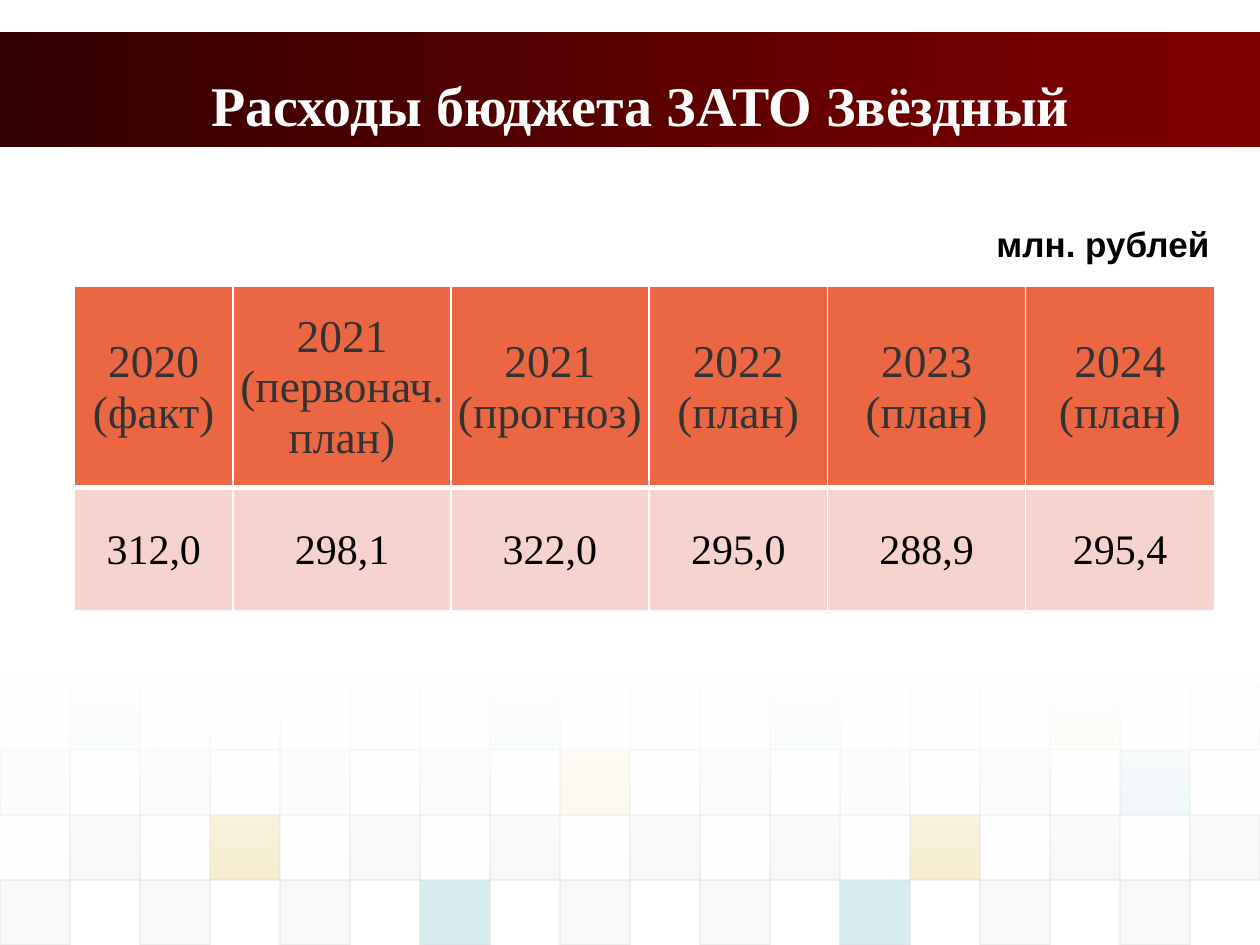
from dataclasses import dataclass

from lxml import etree
from pptx import Presentation
from pptx import util as u
from pptx.dml.color import RGBColor
from pptx.enum import shapes, text
from pptx.oxml import ns

WIDTH, HEIGHT = 10, 7.5


@dataclass(frozen=True)
class Theme:
    serif: str = "Times New Roman"
    sans: str = "Arial"
    title_size: int = 32
    header_size: int = 26
    value_size: int = 24
    unit_size: int = 20
    white: str = "FFFFFF"
    black: str = "000000"
    band_dark: str = "330000"
    band_light: str = "800000"
    header_fill: str = "EB6743"
    header_text: str = "333333"
    value_fill: str = "F7D3CF"
    grey: str = "DDDDDD"
    pale: str = "EAEAEA"
    teal: str = "38A3B2"
    gold: str = "D3A911"


THEME = Theme()
TILE_COLOURS = {"d": THEME.grey, "e": THEME.pale, "t": THEME.teal, "g": THEME.gold}
# One row of tiles per entry: colour keys, opacity in percent
TILE_ROWS = [("teetdtege", 5), ("ddddgdddt", 10),
             ("dgddddgdd", 20), ("dddtddtdd", 20)]
BUDGET = [
    (("2020", "(факт)"), "312,0"),
    (("2021", "(первонач.план)"), "298,1"),
    (("2021", "(прогноз)"), "322,0"),
    (("2022", "(план)"), "295,0"),
    (("2023", "(план)"), "288,9"),
    (("2024", "(план)"), "295,4"),
]
COLUMN_WIDTHS = [1.26, 1.73, 1.57, 1.42, 1.57, 1.5]
ROW_HEIGHTS = [1.6, 0.98]


def inches(box):
    return [u.Inches(length) for length in box]


def colour(value):
    return RGBColor.from_string(value)


def set_alpha(colour_element, percent):
    alpha = etree.SubElement(colour_element, ns.qn("a:alpha"))
    alpha.set("val", str(percent * 1000))


def add_rect(slide, box):
    rect = slide.shapes.add_shape(shapes.MSO_SHAPE.RECTANGLE, *inches(box))
    rect.shadow.inherit = False
    rect.line.fill.background()
    return rect


def set_gradient(rect, angle, stops):
    rect.fill.gradient()
    rect.fill.gradient_angle = angle
    for stop, (value, opacity) in zip(rect.fill.gradient_stops, stops):
        stop.color.rgb = colour(value)
    for element, (value, opacity) in zip(rect._element.iter(ns.qn("a:srgbClr")), stops):
        if opacity < 100:
            set_alpha(element, opacity)


def add_run(paragraph, words, font, size, value, bold=False):
    run = paragraph.add_run()
    run.text = words
    run.font.name, run.font.size, run.font.bold = font, u.Pt(size), bold
    run.font.color.rgb = colour(value)


def add_checkerboard(slide, box):
    """Tiles on alternate squares, fading out towards the top."""
    left, top, width, height = box
    tile_w, tile_h = width / 18, height / len(TILE_ROWS)
    for row, (keys, opacity) in enumerate(TILE_ROWS):
        for index, key in enumerate(keys):
            column = 2 * index + (row + 1) % 2
            tile = add_rect(slide, (left + column * tile_w, top + row * tile_h,
                                    tile_w, tile_h))
            tile.fill.solid()
            tile.fill.fore_color.rgb = colour(TILE_COLOURS[key])
            tile.line.color.rgb = colour(THEME.grey)
            tile.line.width = u.Pt(0.75)
            fill, outline = tile._element.spPr.iter(ns.qn("a:srgbClr"))
            set_alpha(fill, opacity)
            set_alpha(outline, 60)
    fade = add_rect(slide, (left, top - 0.07, width, 3 * tile_h + 0.07))
    set_gradient(fade, 270, [(THEME.white, 90), (THEME.white, 0)])


def add_title_band(slide, box):
    left, top, width, height = box
    band = add_rect(slide, box)
    set_gradient(band, 0, [(THEME.band_dark, 100), (THEME.band_light, 100)])
    title = slide.shapes.title
    title.left, title.top, title.width, title.height = inches(
        (left + 0.36, top, width - 0.55, height + 0.24))
    # Bring the title in front of the band
    slide.shapes._spTree.append(title._element)
    title.text_frame.vertical_anchor = text.MSO_ANCHOR.MIDDLE
    paragraph = title.text_frame.paragraphs[0]
    paragraph.alignment = text.PP_ALIGN.CENTER
    add_run(paragraph, "Расходы бюджета ЗАТО Звёздный",
            THEME.serif, THEME.title_size, THEME.white, True)


def add_unit_label(slide, box):
    label = slide.shapes.add_textbox(*inches(box))
    label.text_frame.word_wrap = False
    label.text_frame.auto_size = text.MSO_AUTO_SIZE.SHAPE_TO_FIT_TEXT
    add_run(label.text_frame.paragraphs[0], "млн. рублей",
            THEME.sans, THEME.unit_size, THEME.black, True)


def set_borders(cell, bottom):
    properties = cell._tc.get_or_add_tcPr()
    for index, (side, points) in enumerate(
            [("lnL", 1), ("lnR", 1), ("lnT", 1), ("lnB", bottom)]):
        line = etree.Element(ns.qn(f"a:{side}"), w=str(u.Pt(points)))
        fill = etree.SubElement(line, ns.qn("a:solidFill"))
        etree.SubElement(fill, ns.qn("a:srgbClr"), val=THEME.white)
        properties.insert(index, line)


def fill_cell(cell, lines, size, ink, fill, bottom):
    cell.vertical_anchor = text.MSO_ANCHOR.MIDDLE
    cell.margin_left = cell.margin_right = cell.margin_top = u.Inches(0.01)
    cell.margin_bottom = 0
    cell.fill.solid()
    cell.fill.fore_color.rgb = colour(fill)
    set_borders(cell, bottom)
    for index, words in enumerate(lines):
        frame = cell.text_frame
        paragraph = frame.add_paragraph() if index else frame.paragraphs[0]
        paragraph.alignment = text.PP_ALIGN.CENTER
        add_run(paragraph, words, THEME.serif, size, ink)


def add_budget_table(slide, left, top):
    box = (left, top, sum(COLUMN_WIDTHS), sum(ROW_HEIGHTS))
    table = slide.shapes.add_table(2, len(BUDGET), *inches(box)).table
    for row, height in zip(table.rows, ROW_HEIGHTS):
        row.height = u.Inches(height)
    for index, (heading, amount) in enumerate(BUDGET):
        table.columns[index].width = u.Inches(COLUMN_WIDTHS[index])
        fill_cell(table.cell(0, index), heading, THEME.header_size,
                  THEME.header_text, THEME.header_fill, 3)
        fill_cell(table.cell(1, index), [amount], THEME.value_size,
                  THEME.black, THEME.value_fill, 1)


def main():
    deck = Presentation()
    deck.slide_width, deck.slide_height = inches((WIDTH, HEIGHT))
    slide = deck.slides.add_slide(deck.slide_layouts[5])
    board_top = HEIGHT * 0.725
    add_checkerboard(slide, (0, board_top, WIDTH, HEIGHT - board_top))
    add_title_band(slide, (0, HEIGHT / 30, WIDTH, 0.92))
    add_budget_table(slide, 0.59, 2.27)
    add_unit_label(slide, (7.81, 1.72, 1.91, 0.44))
    deck.save("out.pptx")


if __name__ == "__main__":
    main()
